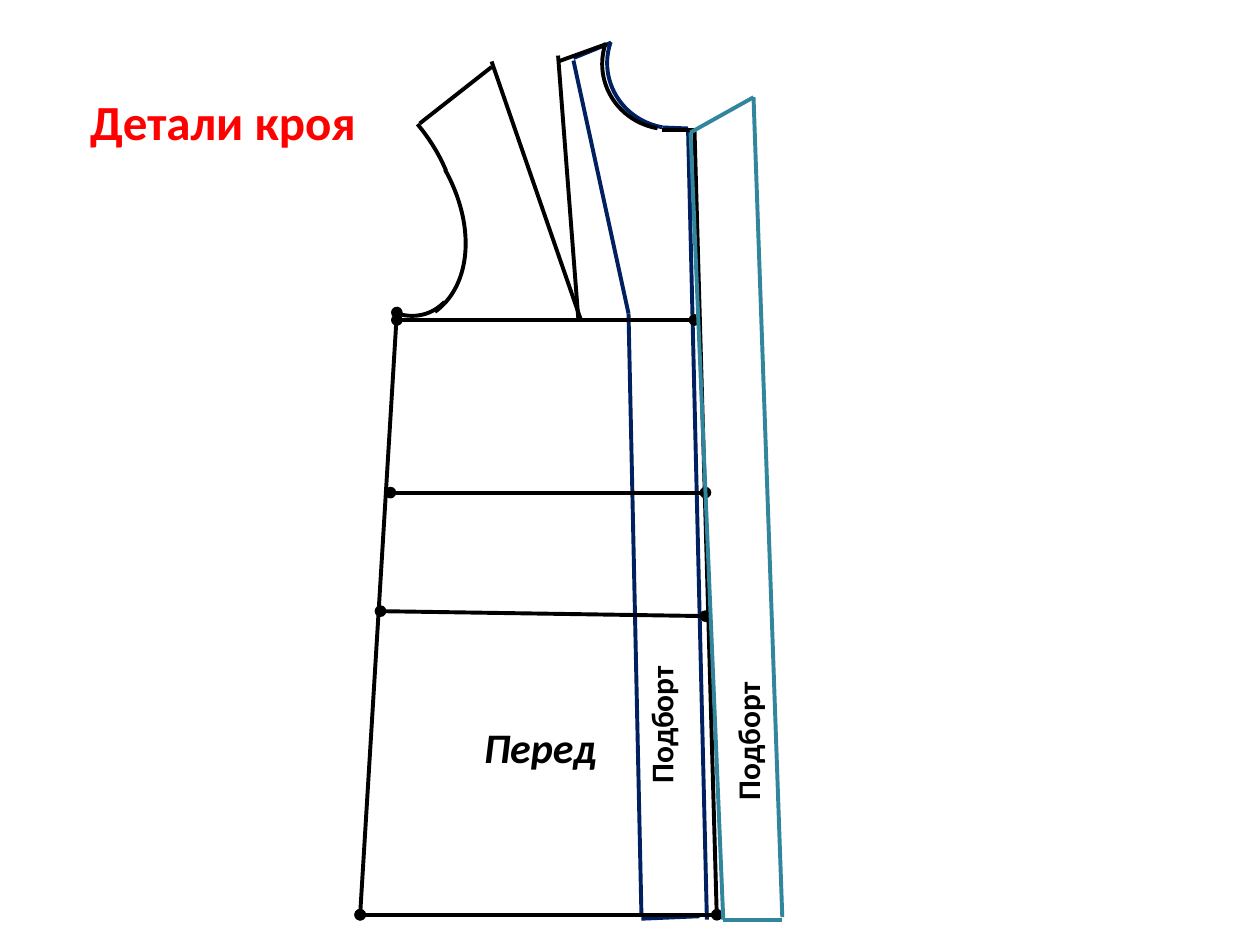
from lxml import etree
from pptx import Presentation, util as u
from pptx.dml.color import RGBColor
from pptx.enum import shapes, text
from pptx.oxml.ns import qn

BLACK = RGBColor(0x00, 0x00, 0x00)
RED = RGBColor(0xFF, 0x00, 0x00)
NAVY = RGBColor(0x00, 0x20, 0x60)
TEAL = RGBColor(0x31, 0x85, 0x9C)
SEAM_WIDTH = u.Pt(2.25)

FACING_SEAMS = [
    ((12.32, 0.86), (11.56, 1.17)),
    ((12.93, 18.52), (14.1, 18.47)),
    ((13.36, 2.57), (13.87, 2.59)),
    ((13.87, 2.59), (14.25, 18.54)),
    ((11.56, 1.22), (12.67, 6.32)),
    ((12.67, 6.32), (12.93, 18.42)),
]
FRONT_LEVELS = [
    ((7.26, 18.44), (14.45, 18.44)),
    ((8, 6.45), (14, 6.45)),
    ((7.87, 9.93), (14.22, 9.93)),
    ((7.67, 12.32), (14.22, 12.42)),
    ((8, 6.3), (7.26, 18.44)),
]
FRONT_SEAMS = [
    ((11.66, 6.45), (11.25, 1.12)),
    ((11.71, 6.45), (9.91, 1.24)),
    ((9.91, 1.35), (8.46, 2.49)),
    ((12.22, 0.89), (11.25, 1.24)),
    ((13.34, 2.62), (14, 2.62)),
    ((14, 2.62), (14.45, 18.49)),
]
ARMHOLE = [
    ((3.07, 1.37, 6.43, 4.83), (291.07, 314.76), 37.9),
    ((6.86, 4.04, 2.59, 2.13), (343.27, 28.01), 67.4),
    ((4.6, 2.29, 5.26, 3.73), (282.97, 0), 54.2),
]
NECK_ANGLES = (100.63, 198.06)
CUT_FACING = [(13.92, 2.67), (14.58, 18.54), (15.77, 18.54),
              (15.77, 18.49), (15.19, 1.96)]


def add_seam(slide, start, end, color, dots=False):
    seam = slide.shapes.add_connector(
        shapes.MSO_CONNECTOR.STRAIGHT, *map(u.Cm, start + end))
    seam.line.color.rgb = color
    seam.line.width = SEAM_WIDTH
    if dots:
        outline = seam.line._get_or_add_ln()
        for tag in ("a:headEnd", "a:tailEnd"):
            etree.SubElement(outline, qn(tag), type="oval")
    etree.SubElement(seam._element.spPr, qn("a:effectLst"))


def add_curve(slide, box, angles, color, rotation=0):
    curve = slide.shapes.add_shape(
        shapes.MSO_SHAPE.ARC, *map(u.Cm, box))
    for index, degrees in enumerate(angles):
        curve.adjustments[index] = degrees * 0.6
    curve.rotation = rotation
    curve.shadow.inherit = False
    curve.fill.background()
    curve.line.color.rgb = color
    curve.line.width = SEAM_WIDTH


def add_label(slide, wording, box, size, color=BLACK, italic=None, rotation=0):
    label = slide.shapes.add_textbox(*map(u.Cm, box))
    label.rotation = rotation
    frame = label.text_frame
    frame.word_wrap = True
    frame.auto_size = text.MSO_AUTO_SIZE.SHAPE_TO_FIT_TEXT
    paragraph = frame.paragraphs[0]
    paragraph.alignment = text.PP_ALIGN.CENTER
    run = paragraph.add_run()
    run.text = wording
    run.font.name = "Calibri"
    run.font.size = u.Pt(size)
    run.font.bold = True
    run.font.italic = italic
    run.font.color.rgb = color


def draw_facing_on_front(slide):
    add_curve(slide, (12.24, -0.05, 2.72, 2.64), NECK_ANGLES, NAVY)
    for start, end in FACING_SEAMS:
        add_seam(slide, start, end, NAVY)


def draw_front(slide):
    for box, angles, rotation in ARMHOLE:
        add_curve(slide, box, angles, BLACK, rotation)
    add_curve(slide, (12.14, -0.03, 2.72, 2.64), NECK_ANGLES, BLACK)
    for start, end in FRONT_LEVELS:
        add_seam(slide, start, end, BLACK, dots=True)
    for start, end in FRONT_SEAMS:
        add_seam(slide, start, end, BLACK)
    add_label(slide, "Перед", (9.02, 14.43, 3.73, 1.27), 24, italic=True)


def draw_cut_facing(slide):
    neck, hem_left, hem_right, edge_bottom, edge_top = CUT_FACING
    for start, end in ((neck, hem_left), (edge_top, edge_bottom),
                       (neck, edge_top), (hem_left, hem_right)):
        add_seam(slide, start, end, TEAL)


def main():
    deck = Presentation()
    deck.slide_width, deck.slide_height = u.Cm(25.4), u.Cm(19.05)
    slide = deck.slides.add_slide(deck.slide_layouts[6])
    draw_facing_on_front(slide)
    add_label(slide, "Детали кроя", (-0.1, 1.73, 9.19, 1.45), 28, color=RED)
    draw_front(slide)
    draw_cut_facing(slide)
    for left, top in ((12.88, 14.43), (11.13, 14.1)):
        add_label(slide, "Подборт", (left, top, 4.39, 1.02), 18, rotation=270)
    deck.save("out.pptx")


if __name__ == "__main__":
    main()
